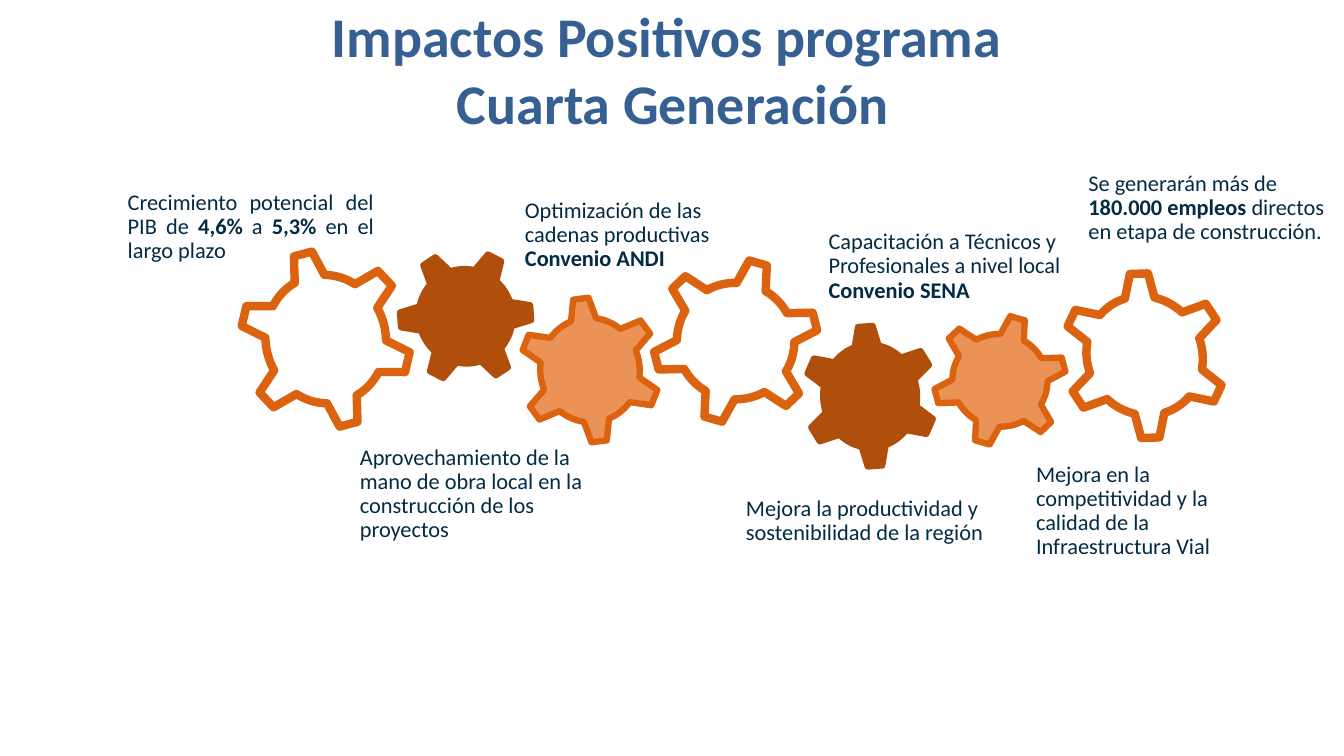
import pptx
import pptx.util
import pptx.dml.color
import pptx.enum.shapes
import pptx.enum.text

Cm = pptx.util.Cm
Align = pptx.enum.text.PP_ALIGN
Anchor = pptx.enum.text.MSO_ANCHOR

FONT = "Calibri"
TITLE = ["Impactos Positivos programa ", "Cuarta Generación"]
TITLE_PLACE = (8, -0.1, 17.91, 3.68)
TITLE_COLOR = "366092"
LABEL_COLOR = "022B44"
INSET = 0.1

GEAR_STYLES = {
    "outline": ("FFFFFF", "DB620F", 6),
    "dark": ("B04E0C", "B04E0C", 4.5),
    "light": ("EB9357", "DB620F", 4.5),
}
GEARS = [
    ("outline", (6.05, 6.27, 4.32, 4.55), 345),
    ("dark", (10.06, 6.27, 3.35, 3.4), 326.6),
    ("light", (13.08, 7.47, 3.58, 3.71), 352.7),
    ("outline", (16.43, 6.5, 4.22, 4.19), 16),
    ("dark", (20.24, 8.18, 3.38, 3.61), 356),
    ("light", (23.5, 7.92, 3.4, 3.33), 15.8),
    ("outline", (26.7, 6.91, 4.29, 4.11), 56.6),
]
LABELS = [
    ("Crecimiento potencial del PIB de *4,6%* a *5,3% *en el largo plazo",
     (3.12, 4.42, 6.3, 2.62), "left", Align.JUSTIFY),
    ("Aprovechamiento de la mano de obra local en la construcción de los proyectos",
     (9.07, 11.33, 6.12, 2.26), "right", Align.LEFT),
    ("Optimización de las cadenas productivas *Convenio ANDI*",
     (13.23, 4.8, 5.82, 2.26), "right", Align.LEFT),
    ("Capacitación a Técnicos y Profesionales a nivel local *Convenio SENA*",
     (20.78, 5.41, 6.48, 2.62), "left", Align.LEFT),
    ("Se generarán más de *180.000 empleos *directos en etapa de construcción.",
     (27.33, 3.94, 6.12, 2.62), "left", Align.LEFT),
    ("Mejora la productividad y sostenibilidad de la región",
     (18.8, 12.01, 6.25, 2.26), "right", Align.LEFT),
    ("Mejora en la competitividad y la calidad de la Infraestructura Vial",
     (26.11, 11.76, 5.99, 2.26), "right", Align.LEFT),
]


def rgb(value):
    return pptx.dml.color.RGBColor.from_string(value)


def lengths(place):
    return [Cm(value) for value in place]


def write_text(frame, lines, size, color, align, bold=False, spacing=1.0):
    for index, line in enumerate(lines):
        para = frame.paragraphs[0] if index == 0 else frame.add_paragraph()
        para.alignment = align
        para.line_spacing = spacing
        for position, part in enumerate(line.split("*")):
            if part:
                span = para.add_run()
                span.text = part
                span.font.name = FONT
                span.font.size = pptx.util.Pt(size)
                span.font.bold = bold or position % 2 == 1
                span.font.color.rgb = rgb(color)


def add_title(page):
    title = page.shapes.title
    title.left, title.top, title.width, title.height = lengths(TITLE_PLACE)
    frame = title.text_frame
    frame.word_wrap = False
    frame.auto_size = pptx.enum.text.MSO_AUTO_SIZE.NONE
    frame.vertical_anchor = Anchor.TOP
    write_text(frame, TITLE, size=40, color=TITLE_COLOR, align=Align.CENTER, bold=True)


def add_gear(page, style, place, rotation):
    fill, line, weight = GEAR_STYLES[style]
    gear = page.shapes.add_shape(pptx.enum.shapes.MSO_SHAPE.GEAR_6, *lengths(place))
    gear.rotation = rotation
    gear.shadow.inherit = False
    gear.fill.solid()
    gear.fill.fore_color.rgb = rgb(fill)
    gear.line.color.rgb = rgb(line)
    gear.line.width = pptx.util.Pt(weight)


def add_label(page, text, place, inset_side, align):
    frame = page.shapes.add_textbox(*lengths(place)).text_frame
    frame.word_wrap = True
    frame.vertical_anchor = Anchor.MIDDLE
    frame.margin_top = frame.margin_bottom = 0
    frame.margin_left = Cm(INSET if inset_side == "left" else 0)
    frame.margin_right = Cm(INSET if inset_side == "right" else 0)
    write_text(frame, [text], size=16, color=LABEL_COLOR, align=align, spacing=0.9)


def main():
    deck = pptx.Presentation()
    deck.slide_width, deck.slide_height = Cm(33.87), Cm(19.05)
    page = deck.slides.add_slide(deck.slide_layouts[5])
    add_title(page)
    for gear in GEARS:
        add_gear(page, *gear)
    for label in LABELS:
        add_label(page, *label)
    deck.save("out.pptx")


if __name__ == "__main__":
    main()
